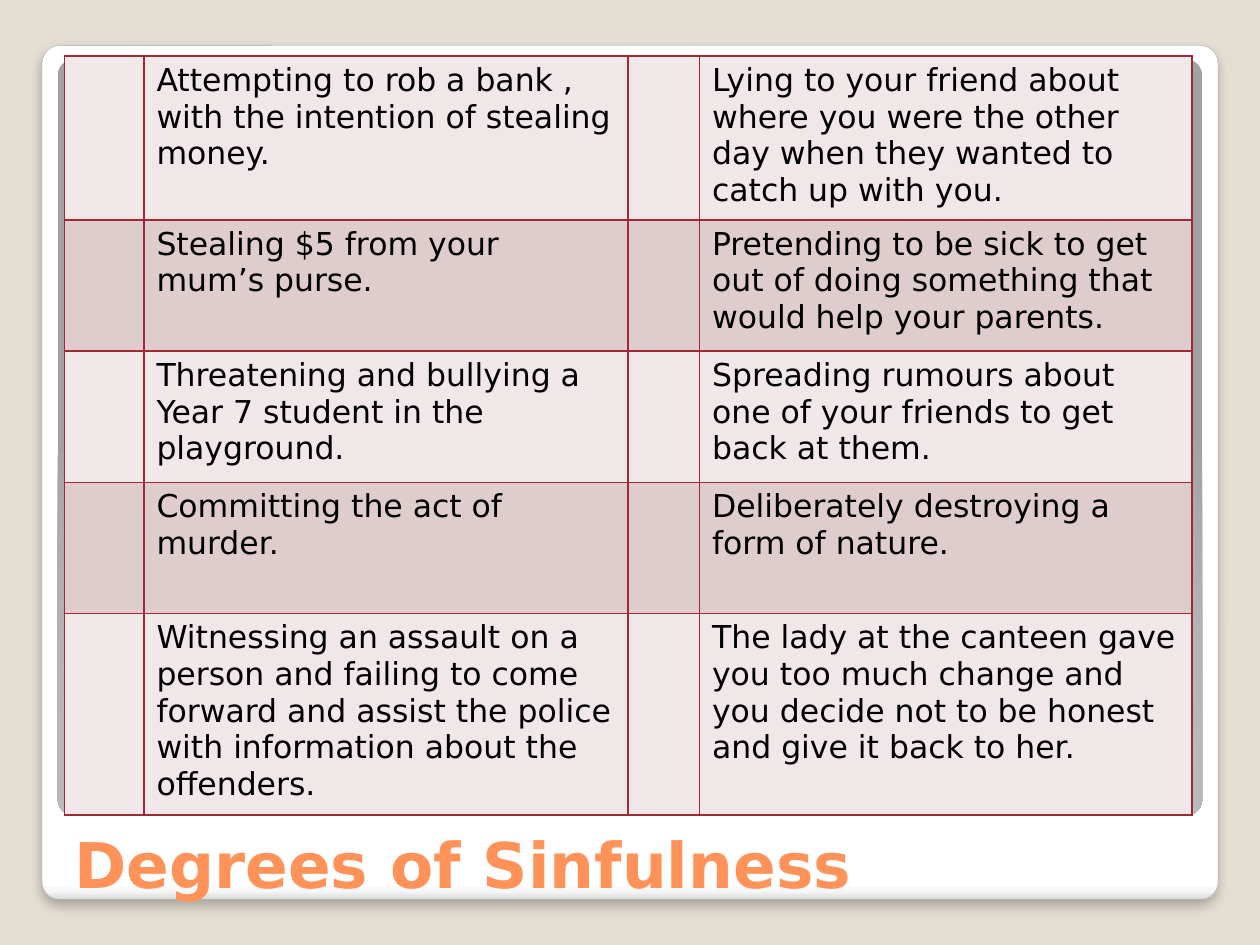
from pptx import Presentation
from pptx.util import Pt
from pptx.dml.color import RGBColor as Rgb
from pptx.enum.shapes import MSO_SHAPE as Shape
from pptx.enum.text import MSO_ANCHOR as Anchor
from pptx.oxml import parse_xml
from pptx.oxml.ns import nsdecls

TITLE = "Degrees of Sinfulness"
ROWS = [
    ("Attempting to rob a bank , with the intention of stealing money.",
     "Lying to your friend about where you were the other day when they wanted to catch up with you."),
    ("Stealing $5 from your mum’s purse.",
     "Pretending to be sick to get out of doing something that would help your parents."),
    ("Threatening and bullying a Year 7 student in the playground.",
     "Spreading rumours about one of your friends to get back at them."),
    ("Committing the act of murder.",
     "Deliberately destroying a form of nature."),
    ("Witnessing an assault on a person and failing to come forward and assist the police with information about the offenders.",
     "The lady at the canteen gave you too much change and you decide not to be honest and give it back to her."),
]
COLS = [45.5, 276.5, 41, 281.5]
ROW_H = 75
THEME = {
    "font": "DejaVu Sans", "head": 36, "body": 18,
    "back": "E3DED1", "title": "FF9258", "text": "000000",
    "rule": "9F2936", "edge": "A4A4A4", "bands": ("F0E8E8", "DFCDCE"),
    "card": [(0, "FFFFFF"), (98, "FFFFFF"), (99, "F7F7F7"), (100, "DADADA")],
    "panel": [(0, "FFFFFF"), (55, "E1E1E1"), (100, "A2A2A2")],
}
DOWN = '<a:lin ang="5400000" scaled="0"/>'
ROUND = ('<a:path path="circle"><a:fillToRect l="50000" t="175000" '
         'r="50000" b="-75000"/></a:path>')
SHADE = ('<a:outerShdw blurRad="76200" dist="50800" dir="5400000" algn="t" rotWithShape="0">'
         '<a:srgbClr val="000000"><a:alpha val="25000"/></a:srgbClr></a:outerShdw>')


def node(tag, body, attrs=""):
    return parse_xml(f"<a:{tag} {nsdecls('a')} {attrs}>{body}</a:{tag}>")


def color(name):
    return Rgb.from_string(THEME[name])


def style(frame, size, tint, bold=False):
    for para in frame.paragraphs:
        for run in para.runs:
            font = run.font
            font.name, font.size, font.bold = THEME["font"], Pt(size), bold
            font.color.rgb = color(tint)


def add_card(slide, box, stops, flow):
    card = slide.shapes.add_shape(Shape.ROUNDED_RECTANGLE, *map(Pt, box))
    card.adjustments[0] = 0.021
    card.shadow.inherit = False
    card.line.fill.background()
    marks = "".join(f'<a:gs pos="{at * 1000}"><a:srgbClr val="{tint}"/></a:gs>'
                    for at, tint in THEME[stops])
    fill = node("gradFill", f"<a:gsLst>{marks}</a:gsLst>{flow}", 'rotWithShape="1"')
    card._element.spPr.find(".//{*}prstGeom").addnext(fill)
    return card


def add_title(slide):
    box = slide.shapes.add_textbox(Pt(36.5), Pt(434), Pt(644.5), Pt(83))
    frame = box.text_frame
    frame.word_wrap = True
    frame.vertical_anchor = Anchor.BOTTOM
    frame.margin_left, frame.margin_bottom = Pt(6), Pt(2)
    frame.text = TITLE
    style(frame, THEME["head"], "title", True)


def add_grid(slide):
    grid = slide.shapes.add_table(len(ROWS), len(COLS), Pt(36.75), Pt(32),
                                  Pt(sum(COLS)), Pt(ROW_H * len(ROWS))).table
    grid.first_row = False
    for col, width in zip(grid.columns, COLS):
        col.width = Pt(width)
    for i, (left, right) in enumerate(ROWS):
        grid.rows[i].height = Pt(ROW_H)
        for j, text in enumerate(("", left, "", right)):
            cell = grid.cell(i, j)
            cell.text = text
            style(cell.text_frame, THEME["body"], "text")
            props = cell._tc.get_or_add_tcPr()
            for side in ("lnL", "lnR", "lnT", "lnB"):
                ink = f'<a:solidFill><a:srgbClr val="{THEME["rule"]}"/></a:solidFill>'
                props.append(node(side, ink, f'w="{Pt(1)}"'))
            cell.fill.solid()
            cell.fill.fore_color.rgb = Rgb.from_string(THEME["bands"][i % 2])


def main():
    """Build the slide that lists wrongs to be ranked."""
    deck = Presentation()
    deck.slide_width, deck.slide_height = Pt(720), Pt(540)
    slide = deck.slides.add_slide(deck.slide_layouts[6])
    slide.background.fill.solid()
    slide.background.fill.fore_color.rgb = color("back")
    card = add_card(slide, (24, 26, 672, 488), "card", DOWN)
    card.line.color.rgb = color("edge")
    card.line.width = Pt(0.16)
    card._element.spPr.find("{*}effectLst").append(
        parse_xml(SHADE.replace("outerShdw", f"outerShdw {nsdecls('a')}", 1)))
    add_card(slide, (33, 34, 654, 432), "panel", ROUND)
    add_title(slide)
    add_grid(slide)
    deck.save("out.pptx")


if __name__ == "__main__":
    main()
